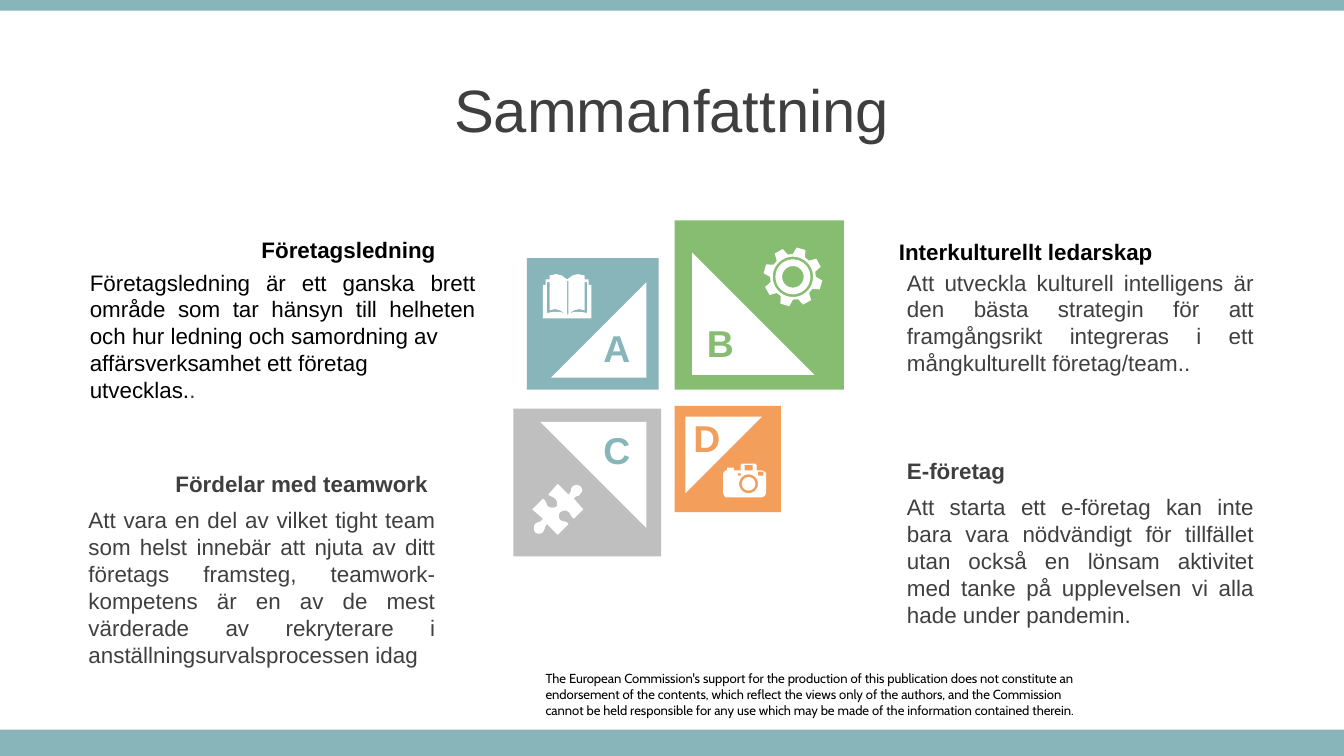
from math import cos, pi, radians, sin

from pptx import Presentation
from pptx.dml.color import RGBColor
from pptx.enum.shapes import MSO_SHAPE
from pptx.enum.text import MSO_ANCHOR, PP_ALIGN
from pptx.util import Inches, Pt

COLORS = {"teal": "87B5BA", "green": "86BD70", "orange": "F39E5A", "gray": "BFBFBF",
          "white": "FFFFFF", "black": "000000", "text": "3F3F3F"}

TILES = [
    ("A", "teal", "teal", (3.92, 1.92, 0.98), (4.1, 2.1, 0.71), 270, (4.37, 2.37)),
    ("B", "green", "green", (5.02, 1.64, 1.26), (5.15, 1.88, 0.91), 0, (5.14, 2.33)),
    ("D", "orange", "orange", (5.02, 3.02, 0.79), (5.1, 3.1, 0.57), 90, (5.04, 3.04)),
    ("C", "gray", "teal", (3.82, 3.04, 1.1), (4.02, 3.14, 0.79), 180, (4.37, 3.13)),
]

TOPICS = [
    ("Företagsledning", (0.57, 1.71), PP_ALIGN.RIGHT, "black", (0.57, 1.95, 3.07, 1.11), "black",
     ["Företagsledning är ett ganska brett område som tar hänsyn till helheten "
      "och hur ledning och samordning av",
      "affärsverksamhet ett företag", "utvecklas."]),
    ("Fördelar med teamwork ", (0.56, 3.45), PP_ALIGN.RIGHT, "text", (0.56, 3.72, 2.78, 1.31), "text",
     ["Att vara en del av vilket tight team som helst innebär att njuta av ditt företags "
      "framsteg, teamwork-kompetens är en av de mest värderade av rekryterare i "
      "anställningsurvalsprocessen idag"]),
    ("Interkulturellt ledarskap", (6.59, 1.72), PP_ALIGN.LEFT, "black", (6.65, 1.95, 2.78, 0.91), "text",
     ["Att utveckla kulturell intelligens är den bästa strategin för att framgångsrikt "
      "integreras i ett mångkulturellt företag/team.."]),
    ("E-företag", (6.65, 3.35), PP_ALIGN.LEFT, "text", (6.65, 3.62, 2.78, 1.11), "text",
     ["Att starta ett e-företag kan inte bara vara nödvändigt för tillfället utan också en "
      "lönsam aktivitet med tanke på upplevelsen vi alla hade under pandemin."]),
]

DISCLAIMER = [
    "The European Commission's support for the production of this publication does not "
    "constitute an endorsement of the contents, which reflect the views only of the authors, "
    "and the Commission",
    "cannot be held responsible for any use which may be made of the information contained therein.",
]

BOOK_CENTER = 4.22
BOOK_COVER = [(4.04, 2.37), (4.04, 2.12), (4.06, 2.12), (4.06, 2.08), (4.09, 2.08),
              (4.09, 2.05), (4.14, 2.04), (4.18, 2.05), (4.22, 2.08)]
BOOK_PAGE_EDGE = [(4.21, 2.34), (4.17, 2.31), (4.13, 2.3), (4.09, 2.31), (4.09, 2.1),
                  (4.07, 2.1), (4.07, 2.33), (4.12, 2.32), (4.17, 2.32)]

CAMERA_BODY = [(5.52, 3.45), (5.62, 3.45), (5.63, 3.46), (5.63, 3.5), (5.67, 3.5), (5.69, 3.51),
               (5.7, 3.52), (5.7, 3.67), (5.69, 3.69), (5.67, 3.7), (5.4, 3.7), (5.39, 3.69),
               (5.38, 3.67), (5.38, 3.52), (5.39, 3.51), (5.4, 3.5), (5.41, 3.5), (5.41, 3.48),
               (5.46, 3.48), (5.46, 3.5), (5.51, 3.5), (5.51, 3.46)]

PUZZLE_START = (4.32, 3.62)
PUZZLE = [
    [(4.33, 3.63), (4.34, 3.66), (4.32, 3.67)], [(4.31, 3.7), (4.29, 3.68), (4.27, 3.71)],
    [(4.34, 3.79)], [(4.27, 3.86)],
    [(4.24, 3.84), (4.25, 3.82), (4.23, 3.81)], [(4.21, 3.79), (4.19, 3.8), (4.17, 3.81)],
    [(4.16, 3.82), (4.15, 3.85), (4.17, 3.87)], [(4.2, 3.89), (4.21, 3.87), (4.23, 3.9)],
    [(4.15, 3.98)], [(4.07, 3.9)],
    [(4.05, 3.92), (4.06, 3.93), (4.04, 3.96)], [(4.02, 3.98), (3.99, 3.97), (3.98, 3.96)],
    [(3.97, 3.94), (3.97, 3.92), (3.98, 3.9)], [(4, 3.88), (4.02, 3.89), (4.04, 3.86)],
    [(3.96, 3.79)], [(4.04, 3.71)],
    [(4.07, 3.73), (4.06, 3.75), (4.08, 3.77)], [(4.1, 3.78), (4.12, 3.78), (4.14, 3.77)],
    [(4.15, 3.76), (4.15, 3.73), (4.13, 3.71)], [(4.11, 3.69), (4.1, 3.7), (4.08, 3.68)],
    [(4.15, 3.6)], [(4.23, 3.68)],
    [(4.26, 3.65), (4.24, 3.64), (4.26, 3.62)], [(4.28, 3.6), (4.31, 3.61), PUZZLE_START],
]


def color(name):
    return RGBColor.from_string(COLORS[name])


def paint(shape, fill):
    shape.shadow.inherit = False
    shape.fill.solid()
    shape.fill.fore_color.rgb = color(fill)
    shape.line.fill.background()


def add_block(page, kind, frame, fill, rotation=0):
    shape = page.shapes.add_shape(kind, *map(Inches, frame))
    shape.rotation = rotation
    paint(shape, fill)


def write(box, lines, size, fill, align=PP_ALIGN.LEFT, bold=False, font="Arial"):
    frame = box.text_frame
    frame.word_wrap = True
    for index, line in enumerate(lines):
        para = frame.paragraphs[0] if index == 0 else frame.add_paragraph()
        para.text = line
        para.alignment = align
        para.font.name = font
        para.font.size = Pt(size)
        para.font.bold = bold
        para.font.color.rgb = color(fill)
    return frame


def add_text(page, frame, lines, *style, **options):
    box = page.shapes.add_textbox(*map(Inches, frame))
    return write(box, lines, *style, **options)


def add_outline(page, contours):
    builder = None
    for contour in contours:
        points = [(Inches(x), Inches(y)) for x, y in contour]
        if builder is None:
            builder = page.shapes.build_freeform(*points[0])
        else:
            builder.move_to(*points[0])
        builder.add_line_segments(points[1:], close=True)
    paint(builder.convert_to_shape(), "white")


def polar(center, radius, angle):
    return center[0] + radius * cos(angle), center[1] + radius * sin(angle)


def circle(center, radius, steps=48):
    return [polar(center, radius, 2 * pi * step / steps) for step in range(steps)]


def rectangle(left, top, right, bottom):
    return [(left, top), (right, top), (right, bottom), (left, bottom)]


def mirrored(points):
    return [(2 * BOOK_CENTER - x, y) for x, y in reversed(points)]


def smooth_outline(start, segments, steps=6):
    points = [start]
    for segment in segments:
        if len(segment) == 1:
            points += segment
            continue
        knots = [points[-1], *segment]
        for step in range(1, steps + 1):
            t = step / steps
            weights = ((1 - t) ** 3, 3 * t * (1 - t) ** 2, 3 * t * t * (1 - t), t ** 3)
            points.append(tuple(sum(w * knot[axis] for w, knot in zip(weights, knots))
                                for axis in (0, 1)))
    return points


def add_icons(page):
    add_outline(page, [BOOK_COVER + mirrored(BOOK_COVER), BOOK_PAGE_EDGE,
                       mirrored(BOOK_PAGE_EDGE), rectangle(4.22, 2.09, 4.23, 2.34)])
    add_outline(page, [smooth_outline(PUZZLE_START, PUZZLE)])
    gear = (5.9, 2.06)
    teeth = [polar(gear, radius, radians(45 * tooth - 74 + offset))
             for tooth in range(8)
             for radius, offset in ((0.17, -16), (0.22, -9), (0.22, 9), (0.17, 16))]
    add_outline(page, [teeth] + [circle(gear, radius) for radius in (0.15, 0.13, 0.08)])
    lens = (5.57, 3.6)
    add_outline(page, [CAMERA_BODY, circle(lens, 0.07), circle(lens, 0.05),
                       rectangle(5.49, 3.52, 5.51, 3.54), rectangle(5.64, 3.51, 5.68, 3.54),
                       rectangle(5.54, 3.46, 5.6, 3.5)])


def add_tile(page, letter, fill, letter_color, square, triangle, rotation, place):
    add_block(page, MSO_SHAPE.RECTANGLE, (*square, square[2]), fill)
    add_block(page, MSO_SHAPE.RIGHT_TRIANGLE, (*triangle, triangle[2]), "white", rotation)
    add_text(page, (*place, 0.44, 0.44), [letter], 20, letter_color, PP_ALIGN.CENTER, bold=True)


def add_topic(page, heading, place, align, heading_color, frame, body_color, lines):
    add_text(page, (*place, 2.77, 0.3), [heading], 12, heading_color, align, bold=True)
    return add_text(page, frame, lines, 12, body_color, PP_ALIGN.JUSTIFY)


def add_title(page, text):
    title = page.shapes.title
    title.left, title.top, title.width, title.height = map(Inches, (0, 0.49, 10, 0.63))
    write(title, [text], 32, "text", PP_ALIGN.CENTER)
    title.text_frame.vertical_anchor = MSO_ANCHOR.MIDDLE


def main():
    deck = Presentation()
    deck.slide_width = Inches(10)
    deck.slide_height = Inches(10 * 9 / 16)
    page = deck.slides.add_slide(deck.slide_layouts[5])
    add_title(page, "Sammanfattning")
    for top, height in ((5.43, 0.2), (0, 0.08)):
        add_block(page, MSO_SHAPE.RECTANGLE, (0, top, 10, height), "teal")
    note = add_text(page, (4.06, 4.99, 4.17, 0.35), DISCLAIMER, 7, "black", font="Cabin")
    note.margin_left = note.margin_top = note.margin_right = note.margin_bottom = 0
    for tile in TILES:
        add_tile(page, *tile)
    add_icons(page)
    bodies = [add_topic(page, *topic) for topic in TOPICS]
    span = bodies[0].paragraphs[-1].add_run()
    span.text = "."
    span.font.color.rgb = color("text")
    deck.save("out.pptx")


if __name__ == "__main__":
    main()
